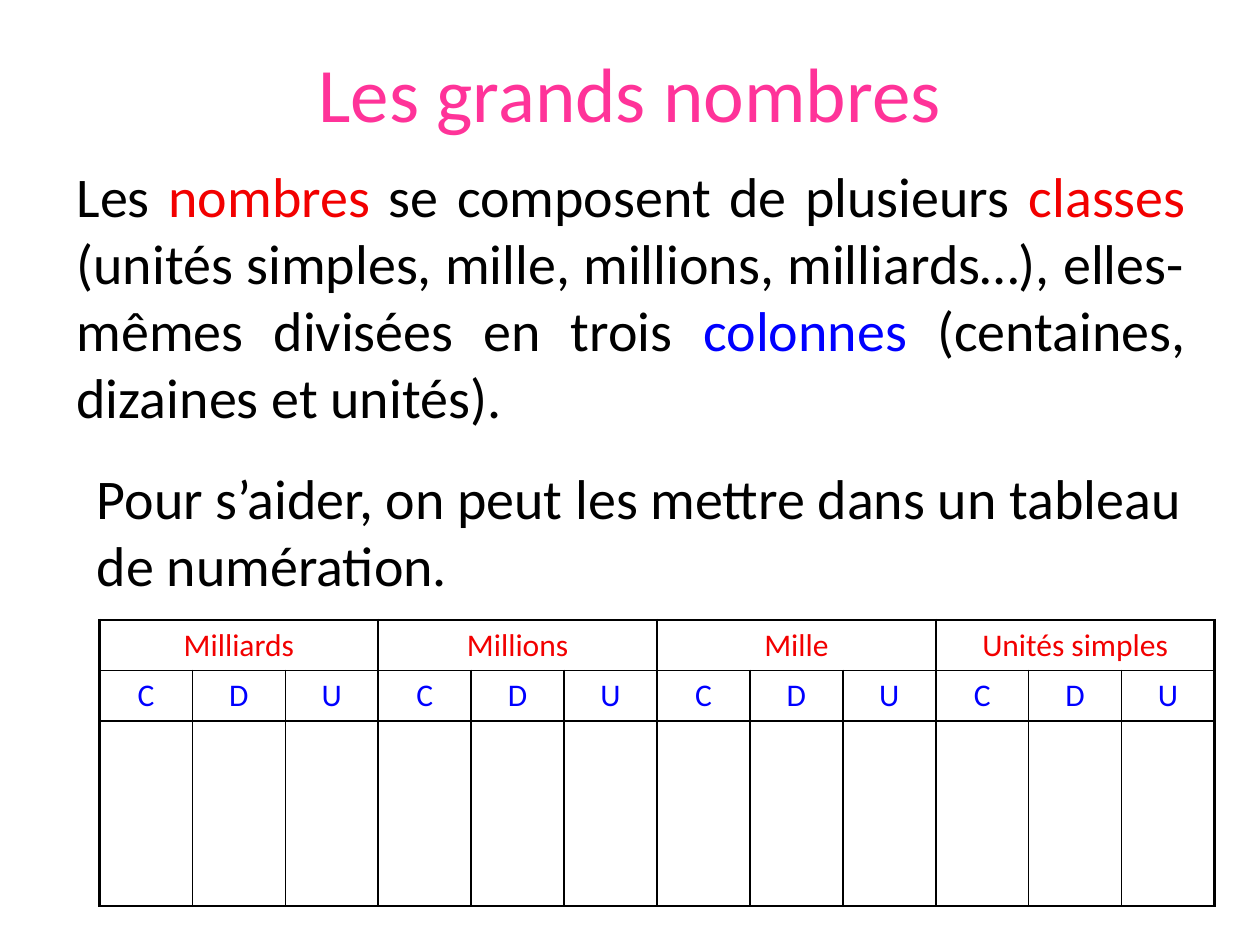
from dataclasses import dataclass

from lxml import etree
from pptx import Presentation
from pptx.dml.color import RGBColor
from pptx.enum import text
from pptx.oxml import ns
from pptx.util import Inches, Pt


@dataclass(frozen=True)
class Theme:
    font: str = "Calibri"
    pink: str = "FF3399"
    red: str = "F20000"
    blue: str = "0000FF"
    black: str = "000000"
    title: int = 44
    body: int = 32
    cell: int = 18
    thick: float = 1.5
    thin: float = 1


THEME = Theme()
ALIGN = text.PP_ALIGN
ANCHOR = text.MSO_ANCHOR


def write(para, parts, size, align):
    """Fill a paragraph with (words, colour) runs."""
    para.alignment = align
    for words, color in parts:
        run = para.add_run()
        run.text = words
        run.font.name = THEME.font
        run.font.size = Pt(size)
        run.font.color.rgb = RGBColor.from_string(color)


def add_text(slide, box, parts, size, align, anchor=ANCHOR.TOP, before=0):
    frame = slide.shapes.add_textbox(*map(Inches, box)).text_frame
    frame.word_wrap = True
    frame.vertical_anchor = anchor
    para = frame.paragraphs[0]
    para.space_before = Pt(before)
    write(para, parts, size, align)


def set_edges(cell, **widths):
    """Draw cell borders; keys are L, R, T and B, in that order."""
    props = cell._tc.get_or_add_tcPr()
    for side, width in widths.items():
        line = etree.SubElement(props, ns.qn(f"a:ln{side}"), w=str(Pt(width)))
        fill = etree.SubElement(line, ns.qn("a:solidFill"))
        etree.SubElement(fill, ns.qn("a:srgbClr"), val=THEME.black)


def add_grid(slide, box, classes, ranks, heights):
    """Place-value table: one group of rank columns for each class."""
    step = len(ranks)
    count = step * len(classes)
    table = slide.shapes.add_table(len(heights), count, *map(Inches, box)).table
    table.first_row = table.horz_banding = False
    for col in table.columns:
        col.width = Inches(box[2] / count)
    for row, height in zip(table.rows, heights):
        row.height = Inches(height)

    # Heavy lines frame the table and each class
    last = len(heights) - 1
    for r in range(len(heights)):
        for c in range(count):
            cell = table.cell(r, c)
            set_edges(
                cell,
                L=THEME.thick if r == 0 or c % step == 0 else THEME.thin,
                R=THEME.thick if r == 0 or c % step == step - 1 else THEME.thin,
                T=THEME.thick if r == 0 else THEME.thin,
                B=THEME.thick if r == last else THEME.thin,
            )
            cell.fill.background()

    # Class names, then the ranks below them
    for i, name in enumerate(classes):
        first = i * step
        head = table.cell(0, first)
        head.merge(table.cell(0, first + step - 1))
        write(head.text_frame.paragraphs[0], [(name, THEME.red)],
              THEME.cell, ALIGN.CENTER)
        for j, rank in enumerate(ranks):
            cell = table.cell(1, first + j)
            cell.vertical_anchor = ANCHOR.MIDDLE
            write(cell.text_frame.paragraphs[0], [(rank, THEME.blue)],
                  THEME.cell, ALIGN.CENTER)


def main():
    deck = Presentation()
    deck.slide_width, deck.slide_height = Inches(10), Inches(7.5)
    slide = deck.slides.add_slide(deck.slide_layouts[6])

    # Title
    add_text(slide, (0.5, 0.3, 9, 0.85), [("Les grands nombres", THEME.pink)],
             THEME.title, ALIGN.CENTER, ANCHOR.MIDDLE)

    # Lesson
    add_text(slide, (0.51, 1.23, 9, 2.24), [
        ("Les ", THEME.black),
        ("nombres", THEME.red),
        (" se composent de plusieurs ", THEME.black),
        ("classes", THEME.red),
        (" (unités simples, mille, millions, milliards…), elles-mêmes"
         " divisées en trois ", THEME.black),
        ("colonnes", THEME.blue),
        (" (centaines, dizaines et unités).", THEME.black),
    ], THEME.body, ALIGN.JUSTIFY, before=3)

    # Lead-in to the table
    add_text(slide, (0.67, 3.63, 9, 1.22), [
        ("Pour s’aider, on peut les mettre dans un tableau de numération.",
         THEME.black),
    ], THEME.body, ALIGN.LEFT, before=3)

    # Place-value table
    add_grid(slide, (0.79, 4.92, 8.85, 2.27),
             ("Milliards", "Millions", "Mille", "Unités simples"),
             "CDU", (0.4, 0.4, 1.47))

    deck.save("out.pptx")


if __name__ == "__main__":
    main()
